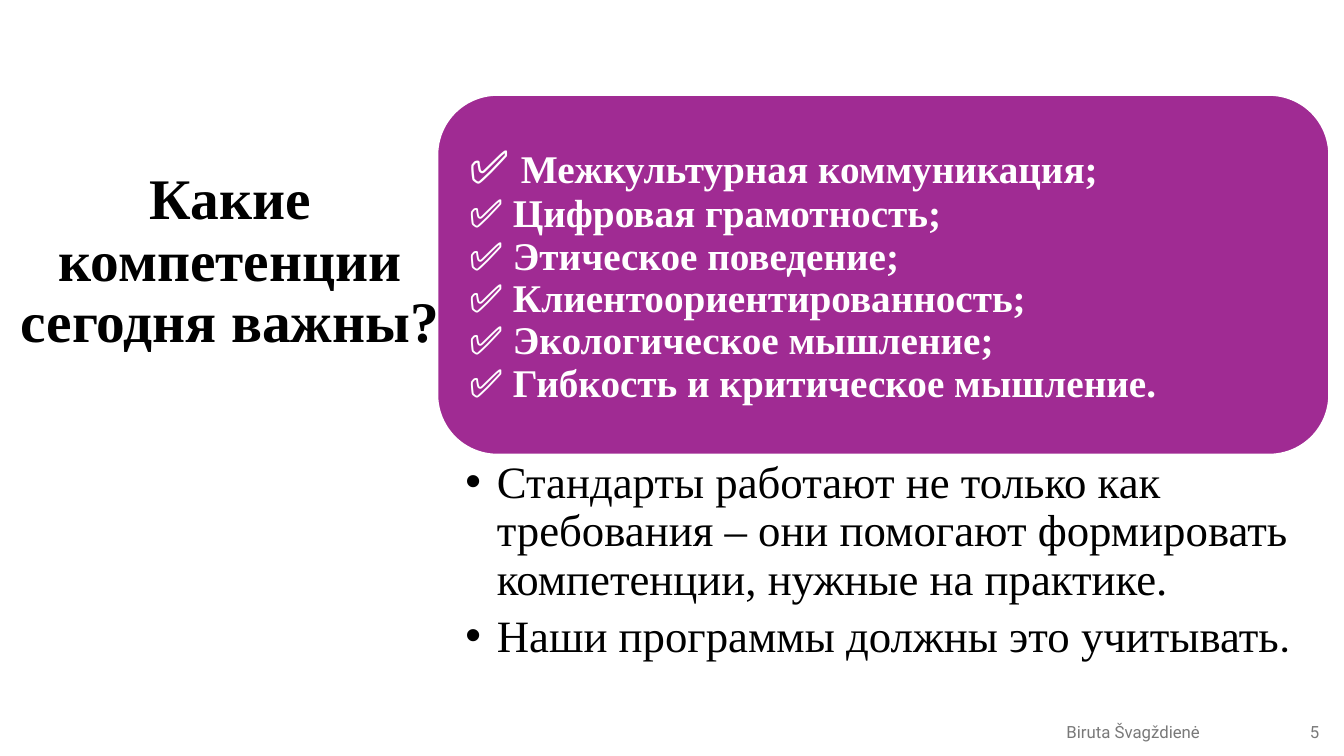
from pptx import Presentation
from pptx.dml.color import RGBColor
from pptx.enum.shapes import MSO_SHAPE
from pptx.enum.text import MSO_ANCHOR, MSO_AUTO_SIZE, PP_ALIGN
from pptx.util import Cm, Pt

PURPLE = RGBColor(0xA0, 0x2B, 0x93)
WHITE = RGBColor(0xFF, 0xFF, 0xFF)
BLACK = RGBColor(0, 0, 0)
GRAY = RGBColor(0x79, 0x79, 0x79)
SERIF = "Times New Roman"
SANS = "Roboto"

SKILLS = [
    "Межкультурная коммуникация;",
    "Цифровая грамотность;",
    "Этическое поведение;",
    "Клиентоориентированность;",
    "Экологическое мышление;",
    "Гибкость и критическое мышление.",
]
CONCLUSIONS = [
    [("Стандарты работают не только как требования – они помогают "
      "формировать компетенции, нужные на практике.", SERIF)],
    [("Наши программы должны это учитывать", SERIF), (".", SANS)],
]


def place(shape, box):
    shape.left, shape.top, shape.width, shape.height = (Cm(v) for v in box)


def set_frame(tf, anchor, left, top, right, bottom):
    tf.word_wrap = True
    tf.auto_size = MSO_AUTO_SIZE.NONE
    tf.vertical_anchor = anchor
    tf.margin_left, tf.margin_top = Cm(left), Cm(top)
    tf.margin_right, tf.margin_bottom = Cm(right), Cm(bottom)


def next_paragraph(tf, index, align=PP_ALIGN.LEFT, after=0):
    p = tf.add_paragraph() if index else tf.paragraphs[0]
    p.alignment = align
    p.line_spacing = 0.9
    p.space_before = Pt(0)
    p.space_after = Pt(after)
    return p


def add_run(p, text, size, color, font=SERIF, bold=False):
    r = p.add_run()
    r.text = text
    r.font.name = font
    r.font.size = Pt(size)
    r.font.bold = bold
    r.font.color.rgb = color


def fill_title(s, box):
    title = s.shapes.title
    place(title, box)
    tf = title.text_frame
    set_frame(tf, MSO_ANCHOR.TOP, 0.25, 0.13, 0.25, 0.13)
    p = next_paragraph(tf, 0, PP_ALIGN.CENTER)
    add_run(p, "Какие компетенции сегодня важны?", 41, BLACK, bold=True)


def add_skills_panel(s, box):
    panel = s.shapes.add_shape(MSO_SHAPE.ROUNDED_RECTANGLE, *(Cm(v) for v in box))
    panel.shadow.inherit = False
    panel.fill.solid()
    panel.fill.fore_color.rgb = PURPLE
    panel.line.color.rgb = WHITE
    panel.line.width = Pt(1.5)
    tf = panel.text_frame
    set_frame(tf, MSO_ANCHOR.MIDDLE, 0.36, 0.36, 0.36, 0.36)
    for i, skill in enumerate(SKILLS):
        p = next_paragraph(tf, i)
        mark_size, mark_font = (28, SERIF) if i else (33, SANS)
        add_run(p, "✅ ", mark_size, WHITE, mark_font, True)
        add_run(p, skill, 28, WHITE, bold=True)


def fill_conclusions(s, box):
    body = s.placeholders[1]
    place(body, box)
    tf = body.text_frame
    set_frame(tf, MSO_ANCHOR.TOP, 0.71, 0.15, 0.81, 0.15)
    for i, parts in enumerate(CONCLUSIONS):
        p = next_paragraph(tf, i, after=6.4)
        pPr = p._p.get_or_add_pPr()
        pPr.set("marL", str(Cm(0.79)))
        pPr.set("indent", str(-Cm(0.79)))
        for text, font in parts:
            add_run(p, text, 32, BLACK, font)


def add_footer(s, box):
    left, top, width, height = box
    number_width = 1.19
    fields = [
        ("Biruta Švagždienė", left, 7.8, PP_ALIGN.CENTER),
        ("5", left + width - number_width, number_width, PP_ALIGN.RIGHT),
    ]
    for text, x, w, align in fields:
        tb = s.shapes.add_textbox(Cm(x), Cm(top), Cm(w), Cm(height))
        set_frame(tb.text_frame, MSO_ANCHOR.MIDDLE, 0.25, 0.13, 0.25, 0.13)
        p = next_paragraph(tb.text_frame, 0, align, 6)
        p.line_spacing = 1.0
        add_run(p, text, 12, GRAY, SANS)


def main():
    prs = Presentation()
    prs.slide_width, prs.slide_height = Cm(33.87), Cm(19.05)
    s = prs.slides.add_slide(prs.slide_layouts[1])
    fill_title(s, (0.2, 4.14, 11.2, 13.44))
    add_skills_panel(s, (11.02, 2.39, 22.48, 9.07))
    fill_conclusions(s, (11.02, 11.43, 22.48, 5.31))
    add_footer(s, (24.66, 17.93, 8.84, 1.02))
    prs.save("out.pptx")


if __name__ == "__main__":
    main()
